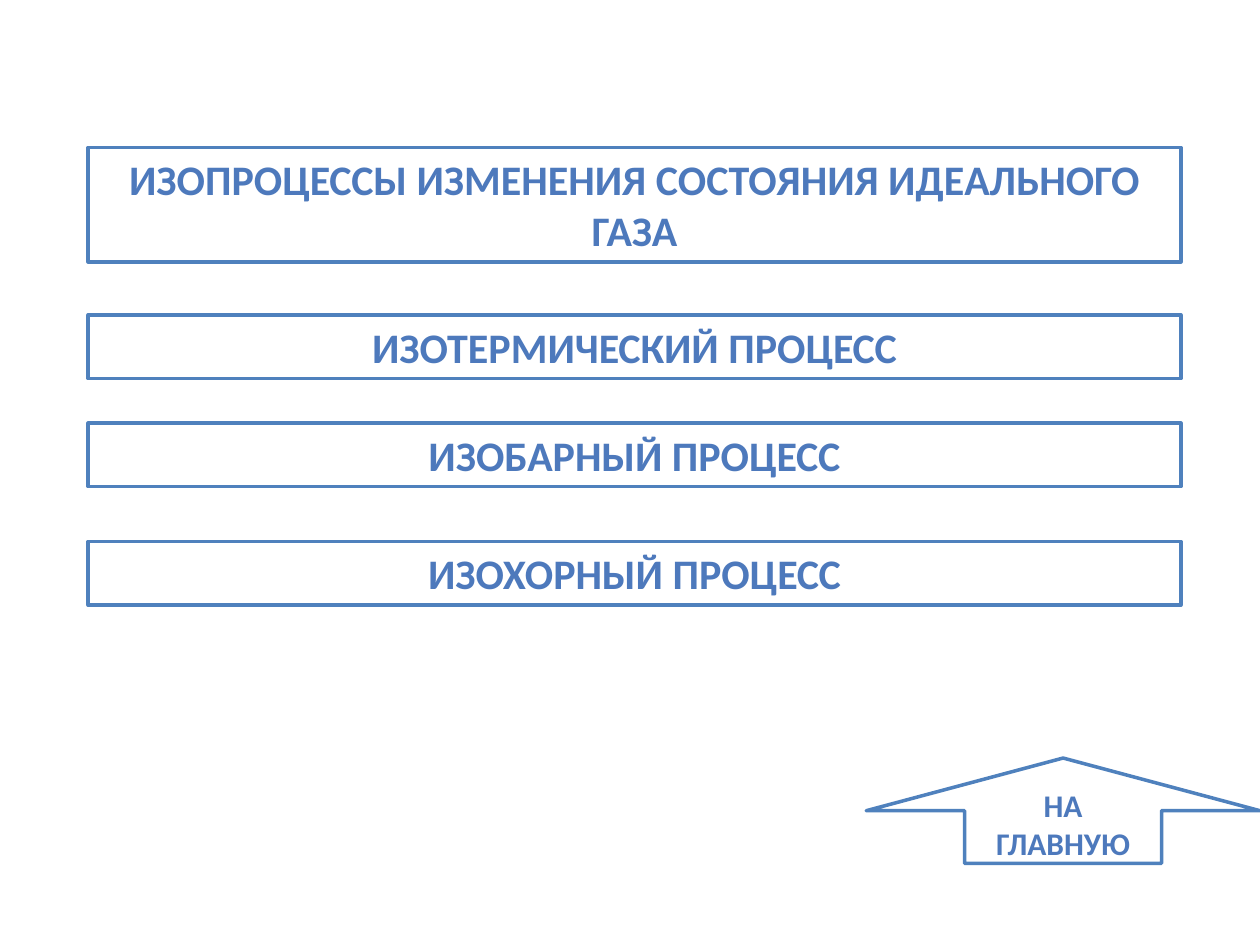
from lxml.etree import SubElement as Sub
from pptx import Presentation
from pptx.dml.color import RGBColor
from pptx.enum.shapes import MSO_SHAPE as Kind
from pptx.enum.text import MSO_ANCHOR as Anchor, MSO_AUTO_SIZE as Fit, PP_ALIGN as Align
from pptx.oxml.ns import qn
from pptx.util import Pt

BARS = [
    ("ИЗОПРОЦЕССЫ ИЗМЕНЕНИЯ СОСТОЯНИЯ ИДЕАЛЬНОГО ГАЗА", 84.24, 65.4),
    ("ИЗОТЕРМИЧЕСКИЙ ПРОЦЕСС", 180, 36.3),
    ("ИЗОБАРНЫЙ ПРОЦЕСС", 241.8, 36.3),
    ("ИЗОХОРНЫЙ ПРОЦЕСС", 309.5, 36.3),
]
HOME = "НА ГЛАВНУЮ"
STOPS = [(0, "7494C9"), (49, "4D79BC"), (50, "346AAA"), (92, "325F94"), (100, "315D91")]
LEFT, WIDTH = 50.4, 624.4


def color(code):
    return RGBColor.from_string(code)


def shade(run):
    props = run.font.fill
    props.gradient()
    grad = run._r.rPr.find(qn("a:gradFill"))
    for part in list(grad):
        grad.remove(part)
    stops = Sub(grad, qn("a:gsLst"))
    for pos, code in STOPS:
        stop = Sub(stops, qn("a:gs"), pos=str(pos * 1000))
        Sub(stop, qn("a:srgbClr"), val=code)
    Sub(grad, qn("a:lin"), ang="5400000", scaled="0")


def write(shape, text, size=24, anchor=Anchor.TOP, fit=Fit.NONE):
    frame = shape.text_frame
    frame.word_wrap = True
    frame.auto_size = fit
    frame.vertical_anchor = anchor
    line = frame.paragraphs[0]
    line.alignment = Align.CENTER
    run = line.add_run()
    run.text = text
    run.font.name = "Calibri"
    run.font.size = Pt(size)
    run.font.bold = True
    shade(run)


def block(slide, kind, left, top, width, height):
    shape = slide.shapes.add_shape(kind, Pt(left), Pt(top), Pt(width), Pt(height))
    shape.shadow.inherit = False
    shape.fill.solid()
    shape.fill.fore_color.rgb = color("FFFFFF")
    shape.line.color.rgb = color("4F81BD")
    shape.line.width = Pt(2)
    return shape


def main():
    deck = Presentation()
    deck.slide_width, deck.slide_height = Pt(720), Pt(540)
    slide = deck.slides.add_slide(deck.slide_layouts[6])
    for text, top, height in BARS:
        bar = block(slide, Kind.RECTANGLE, LEFT, top, WIDTH, height)
        write(bar, text, fit=Fit.SHAPE_TO_FIT_TEXT)
    arrow = block(slide, Kind.UP_ARROW, 495, 433.2, 225, 60.2)
    write(arrow, HOME, size=18, anchor=Anchor.MIDDLE)
    deck.save("out.pptx")


if __name__ == "__main__":
    main()
